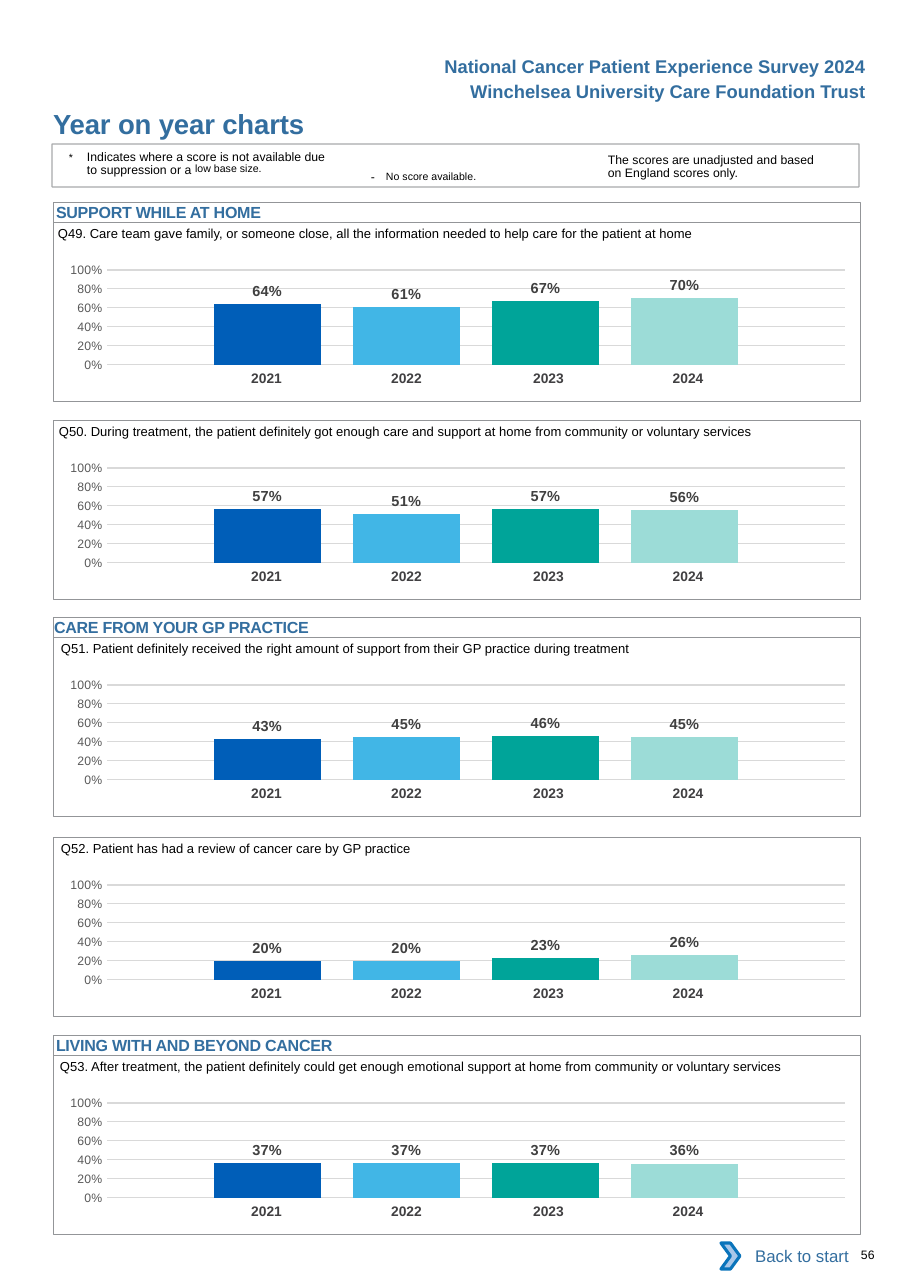
from lxml.etree import SubElement
from pptx import Presentation
from pptx.chart.data import CategoryChartData
from pptx.dml.color import RGBColor
from pptx.enum.chart import XL_CHART_TYPE, XL_LABEL_POSITION, XL_TICK_MARK
from pptx.enum.shapes import MSO_SHAPE
from pptx.enum.text import MSO_ANCHOR, PP_ALIGN
from pptx.oxml.ns import qn
from pptx.util import Pt

EMU_PER_PX = 8298
HEADING = "336E9F"
BLACK = "000000"
FRAME = "939598"
NO_GRID_STYLE = "{2D5ABB26-0587-4C30-8999-92F81FD0307C}"
YEAR_COLOURS = {"2021": "005EB8", "2022": "41B6E6", "2023": "00A499", "2024": "9CDCD7"}
YEAR_COLUMNS = [(140, 0), (140, 0), (148, 4), (140, 13)]

PANEL_LEFT, PANEL_WIDTH, PANEL_HEIGHT = 53, 807, 179
CHART_WIDTH, CHART_HEIGHT = 807, 142
PLOT = {"x": 64 / CHART_WIDTH, "y": 21 / CHART_HEIGHT,
        "w": 738 / CHART_WIDTH, "h": 95 / CHART_HEIGHT}

SECTIONS = [
    (222, 3, "SUPPORT WHILE AT HOME"),
    (637, 1, "CARE FROM YOUR GP PRACTICE"),
    (1055, 3, "LIVING WITH AND BEYOND CANCER"),
]
QUESTIONS = [
    (222, 58, "Q49. Care team gave family, or someone close, all the information needed "
     "to help care for the patient at home", [0.64, 0.61, 0.67, 0.70]),
    (420, 59, "Q50. During treatment, the patient definitely got enough care and support "
     "at home from community or voluntary services", [0.57, 0.51, 0.57, 0.56]),
    (637, 61, "Q51. Patient definitely received the right amount of support from their "
     "GP practice during treatment", [0.43, 0.45, 0.46, 0.45]),
    (837, 61, "Q52. Patient has had a review of cancer care by GP practice",
     [0.20, 0.20, 0.23, 0.26]),
    (1055, 60, "Q53. After treatment, the patient definitely could get enough emotional "
     "support at home from community or voluntary services", [0.37, 0.37, 0.37, 0.36]),
]


def px(length):
    return length * EMU_PER_PX


def box(left, top, width, height):
    return px(left), px(top), px(width), px(height)


def colour(hex_value):
    return RGBColor.from_string(hex_value)


def style_font(font, size, hex_value, bold=False, name="Arial"):
    font.name = name
    font.size = Pt(size)
    font.bold = bold
    font.color.rgb = colour(hex_value)


def write(shape, runs, size, hex_value, bold=False, align=PP_ALIGN.LEFT,
          anchor=MSO_ANCHOR.MIDDLE, inset=0, spacing=0):
    frame = shape.text_frame
    frame.word_wrap = True
    frame.vertical_anchor = anchor
    frame.margin_left = frame.margin_right = px(inset)
    frame.margin_top = frame.margin_bottom = 0
    paragraph = frame.paragraphs[0]
    paragraph.alignment = align
    for text, run_size, raised in runs:
        run = paragraph.add_run()
        run.text = text
        style_font(run.font, run_size or size, hex_value, bold)
        properties = run.font._element
        if spacing:
            properties.set("spc", str(spacing))
        if raised:
            properties.set("baseline", str(raised * 1000))
    return paragraph


def add_text(slide, place, text, size, hex_value=BLACK, **options):
    textbox = slide.shapes.add_textbox(*box(*place))
    runs = [(text, None, 0)] if isinstance(text, str) else text
    return write(textbox, runs, size, hex_value, **options)


def add_block(slide, place, fill=None, line=None, width=0.5, preset=MSO_SHAPE.RECTANGLE):
    block = slide.shapes.add_shape(preset, *box(*place))
    block.shadow.inherit = False
    if fill:
        block.fill.solid()
        block.fill.fore_color.rgb = colour(fill)
    else:
        block.fill.background()
    if line:
        block.line.color.rgb = colour(line)
        block.line.width = Pt(width)
    else:
        block.line.fill.background()
    return block


def add_years(slide, top):
    total = sum(width for width, _ in YEAR_COLUMNS)
    frame = slide.shapes.add_table(1, len(YEAR_COLUMNS), *box(191, top, total, 30))
    next(frame._element.iter(qn("a:tableStyleId"))).text = NO_GRID_STYLE
    table = frame.table
    table.first_row = table.horz_banding = False
    for index, (year, (width, right)) in enumerate(zip(YEAR_COLOURS, YEAR_COLUMNS)):
        table.columns[index].width = px(width)
        cell = table.cell(0, index)
        cell.fill.background()
        cell.margin_left, cell.margin_right = px(11), px(right)
        cell.margin_top = cell.margin_bottom = px(5)
        cell.text_frame.text = year
        paragraph = cell.text_frame.paragraphs[0]
        paragraph.alignment = PP_ALIGN.CENTER
        style_font(paragraph.runs[0].font, 9, "414042", True)


def place_plot(chart):
    plot_area = next(chart._chartSpace.iter(qn("c:plotArea")))
    for layout in plot_area.findall(qn("c:layout")):
        plot_area.remove(layout)
    layout = SubElement(plot_area, qn("c:layout"))
    plot_area.insert(0, layout)
    manual = SubElement(layout, qn("c:manualLayout"))
    settings = {"layoutTarget": "inner", "xMode": "edge", "yMode": "edge", **PLOT}
    for tag, value in settings.items():
        SubElement(manual, qn(f"c:{tag}")).set("val", str(value))


def add_scores(slide, top, scores):
    data = CategoryChartData(number_format="0%")
    data.categories = ["1"]
    for year, score in zip(YEAR_COLOURS, scores):
        data.add_series(year, [score])
    chart = slide.shapes.add_chart(XL_CHART_TYPE.COLUMN_CLUSTERED,
                                   *box(43, top, CHART_WIDTH, CHART_HEIGHT), data).chart
    chart.has_title = chart.has_legend = False
    style_font(chart.font, 10, BLACK, name="Calibri")
    chart.category_axis.visible = False
    axis = chart.value_axis
    axis.minimum_scale, axis.maximum_scale, axis.major_unit = 0, 1, 0.2
    axis.major_tick_mark = axis.minor_tick_mark = XL_TICK_MARK.NONE
    axis.format.line.fill.background()
    axis.major_gridlines.format.line.color.rgb = colour("D9D9D9")
    axis.major_gridlines.format.line.width = Pt(0.75)
    axis.tick_labels.number_format = "0%"
    axis.tick_labels.number_format_is_linked = False
    style_font(axis.tick_labels.font, 8, "595959")
    plot = chart.plots[0]
    plot.vary_by_categories = False
    plot.gap_width, plot.overlap = 200, -30
    for bar, fill in zip(plot.series, YEAR_COLOURS.values()):
        bar.format.fill.solid()
        bar.format.fill.fore_color.rgb = colour(fill)
        labels = bar.data_labels
        labels.show_value = True
        labels.position = XL_LABEL_POSITION.OUTSIDE_END
        labels.number_format = "0%"
        labels.number_format_is_linked = False
        style_font(labels.font, 9.5, "404040", True)
    place_plot(chart)


def add_question(slide, top, text_left, question, scores):
    add_years(slide, top + 144)
    add_scores(slide, top + 27, scores)
    add_block(slide, (PANEL_LEFT, top, PANEL_WIDTH, PANEL_HEIGHT), line=FRAME)
    add_text(slide, (text_left, top + 1, 790, 20), question, 8.5)


def add_section(slide, panel_top, inset, heading):
    bar = add_block(slide, (PANEL_LEFT, panel_top - 20, PANEL_WIDTH, 20), line=FRAME)
    write(bar, [(heading, None, 0)], 10.5, HEADING, bold=True, inset=inset, spacing=-15)


def add_key(slide):
    frame = add_block(slide, (52, 144, 807, 43), line=FRAME, width=0.75)
    line_colour = next(frame.line._ln.iter(qn("a:srgbClr")))
    SubElement(line_colour, qn("a:alpha")).set("val", "80000")
    suppressed = add_text(slide, (69, 153, 264, 30), [
        ("*\t", 12, 3),
        ("Indicates where a score is not available due to suppression or a ", 8, 0),
        ("low base size.", 12, 7)], 8, anchor=MSO_ANCHOR.TOP)
    suppressed._p.get_or_add_pPr().set("marL", str(px(18)))
    suppressed._p.get_or_add_pPr().set("indent", str(px(-18)))
    add_text(slide, (371, 162, 190, 24), [("-", 8, 0), ("\tNo score available.", 12, 3)], 8)
    missing = slide.shapes[-1].text_frame.paragraphs[0]
    missing._p.get_or_add_pPr().set("marL", str(px(15)))
    missing._p.get_or_add_pPr().set("indent", str(px(-15)))
    unadjusted = add_text(slide, (608, 155, 221, 28),
                          "The scores are unadjusted and based on England scores only.",
                          8, anchor=MSO_ANCHOR.TOP)
    suppressed.line_spacing = unadjusted.line_spacing = Pt(8.1)


def main():
    deck = Presentation()
    deck.slide_width, deck.slide_height = px(910), px(1288)
    slide = deck.slides.add_slide(deck.slide_layouts[6])
    headers = ["National Cancer Patient Experience Survey 2024",
               "Winchelsea University Care Foundation Trust"]
    for index, header in enumerate(headers):
        add_text(slide, (420, 50 + 25 * index, 446, 33), header, 12, HEADING,
                 bold=True, align=PP_ALIGN.RIGHT)
    add_text(slide, (53, 107, 496, 33), "Year on year charts", 18, HEADING,
             bold=True, spacing=-10)
    add_key(slide)
    back = add_block(slide, (730, 1233, 130, 46), fill="FFFFFF")
    write(back, [("Back to start", None, 0)], 11, HEADING, align=PP_ALIGN.RIGHT, inset=11)
    add_block(slide, (721, 1243, 19, 26), "A8C7E9", "0A74BB", 2, MSO_SHAPE.CHEVRON)
    add_text(slide, (861, 1248, 45, 14), "56", 8)
    for section in SECTIONS:
        add_section(slide, *section)
    for question in QUESTIONS:
        add_question(slide, *question)
    deck.save("out.pptx")


if __name__ == "__main__":
    main()
